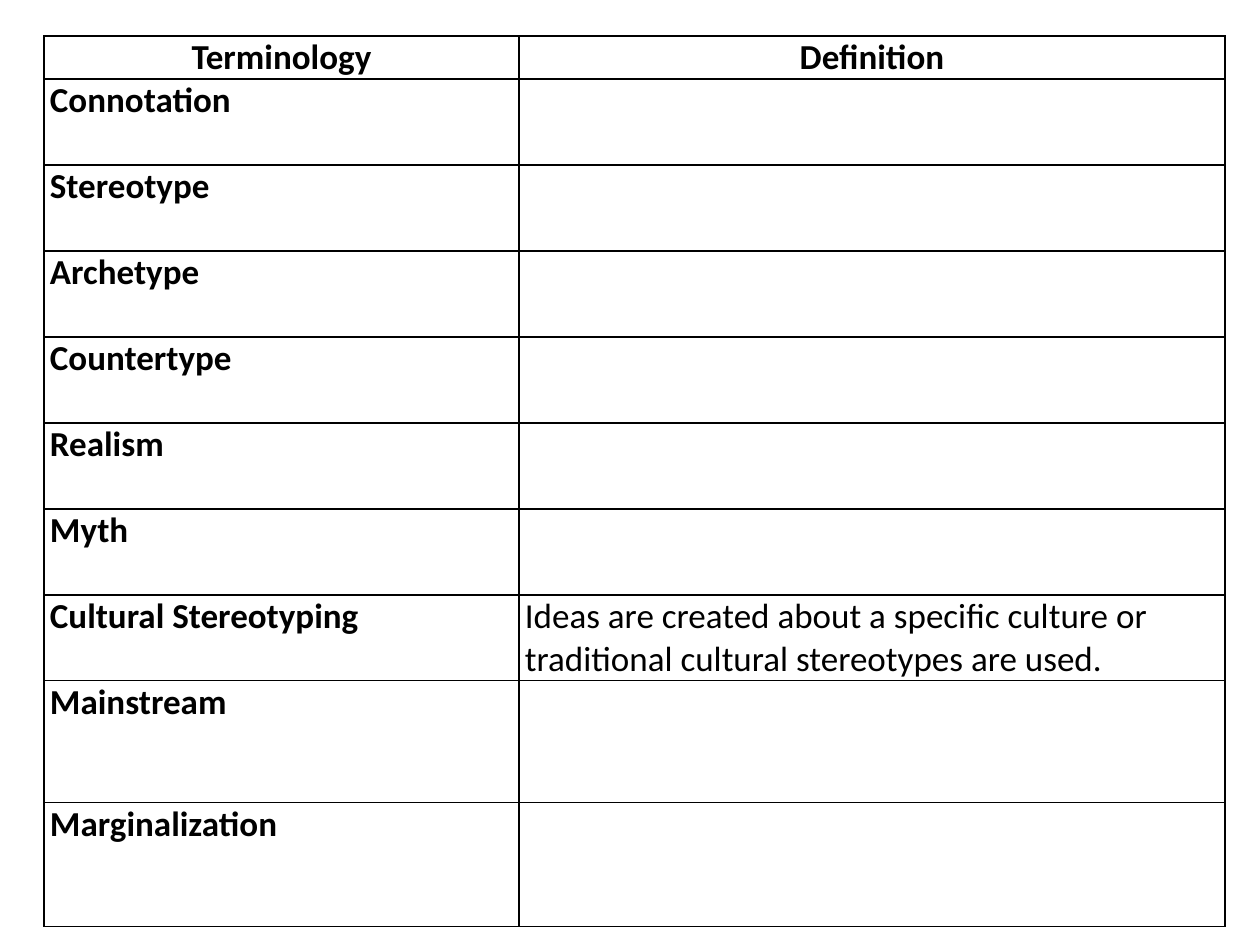
from dataclasses import dataclass

from lxml.etree import SubElement
from pptx import Presentation
from pptx.dml.color import RGBColor
from pptx.enum.text import PP_ALIGN
from pptx.oxml.ns import qn
from pptx.table import _Cell
from pptx.util import Emu, Pt

PX_PER_INCH = 126
BLACK, WHITE = "000000", "FFFFFF"
LEFT, TOP = 44, 36
COLUMN_WIDTHS = (475, 706)
CELL_FORMAT = {
    "margin_left": 6,
    "margin_right": 6,
    "margin_top": 0,
    "margin_bottom": 0,
}


@dataclass(frozen=True)
class Entry:
    term: str
    definition: str = ""
    height: int = 86
    is_header: bool = False


ENTRIES = (
    Entry("Terminology", "Definition", height=43, is_header=True),
    Entry("Connotation"),
    Entry("Stereotype"),
    Entry("Archetype"),
    Entry("Countertype"),
    Entry("Realism"),
    Entry("Myth"),
    Entry(
        "Cultural Stereotyping",
        "Ideas are created about a specific culture or "
        "traditional cultural stereotypes are used.",
    ),
    Entry("Mainstream", height=122),
    Entry("Marginalization", height=124),
)


def px(length: int) -> Emu:
    return Emu(round(length * 914400 / PX_PER_INCH))


def color(hex_value: str) -> RGBColor:
    return RGBColor.from_string(hex_value)


def add_borders(cell: _Cell) -> None:
    """Draw a 1 pt black line on all four sides; call before filling the cell."""
    properties = cell._tc.get_or_add_tcPr()
    for side in ("lnL", "lnR", "lnT", "lnB"):
        line = SubElement(properties, qn(f"a:{side}"), w=str(Pt(1)))
        fill = SubElement(line, qn("a:solidFill"))
        SubElement(fill, qn("a:srgbClr"), val=BLACK)


def write_cell(cell: _Cell, text: str, bold: bool, centered: bool) -> None:
    add_borders(cell)
    cell.fill.solid()
    cell.fill.fore_color.rgb = color(WHITE)
    for attribute, length in CELL_FORMAT.items():
        setattr(cell, attribute, px(length))
    cell.text = text
    paragraph = cell.text_frame.paragraphs[0]
    paragraph.alignment = PP_ALIGN.CENTER if centered else PP_ALIGN.LEFT
    font_format = {"name": "Calibri", "size": Pt(20), "bold": bold}
    for run in paragraph.runs:
        for attribute, value in font_format.items():
            setattr(run.font, attribute, value)
        run.font.color.rgb = color(BLACK)


def main() -> None:
    presentation = Presentation()
    presentation.slide_width = px(1260)
    presentation.slide_height = px(945)
    slide = presentation.slides.add_slide(presentation.slide_layouts[6])

    glossary = slide.shapes.add_table(
        len(ENTRIES), len(COLUMN_WIDTHS), px(LEFT), px(TOP),
        px(sum(COLUMN_WIDTHS)), px(sum(entry.height for entry in ENTRIES)),
    ).table
    glossary.first_row = False
    glossary.horz_banding = False
    for column, width in zip(glossary.columns, COLUMN_WIDTHS):
        column.width = px(width)
    for row, entry in zip(glossary.rows, ENTRIES):
        row.height = px(entry.height)
        term_cell, definition_cell = row.cells
        write_cell(term_cell, entry.term, True, entry.is_header)
        write_cell(definition_cell, entry.definition, entry.is_header, entry.is_header)

    presentation.save("out.pptx")


if __name__ == "__main__":
    main()
